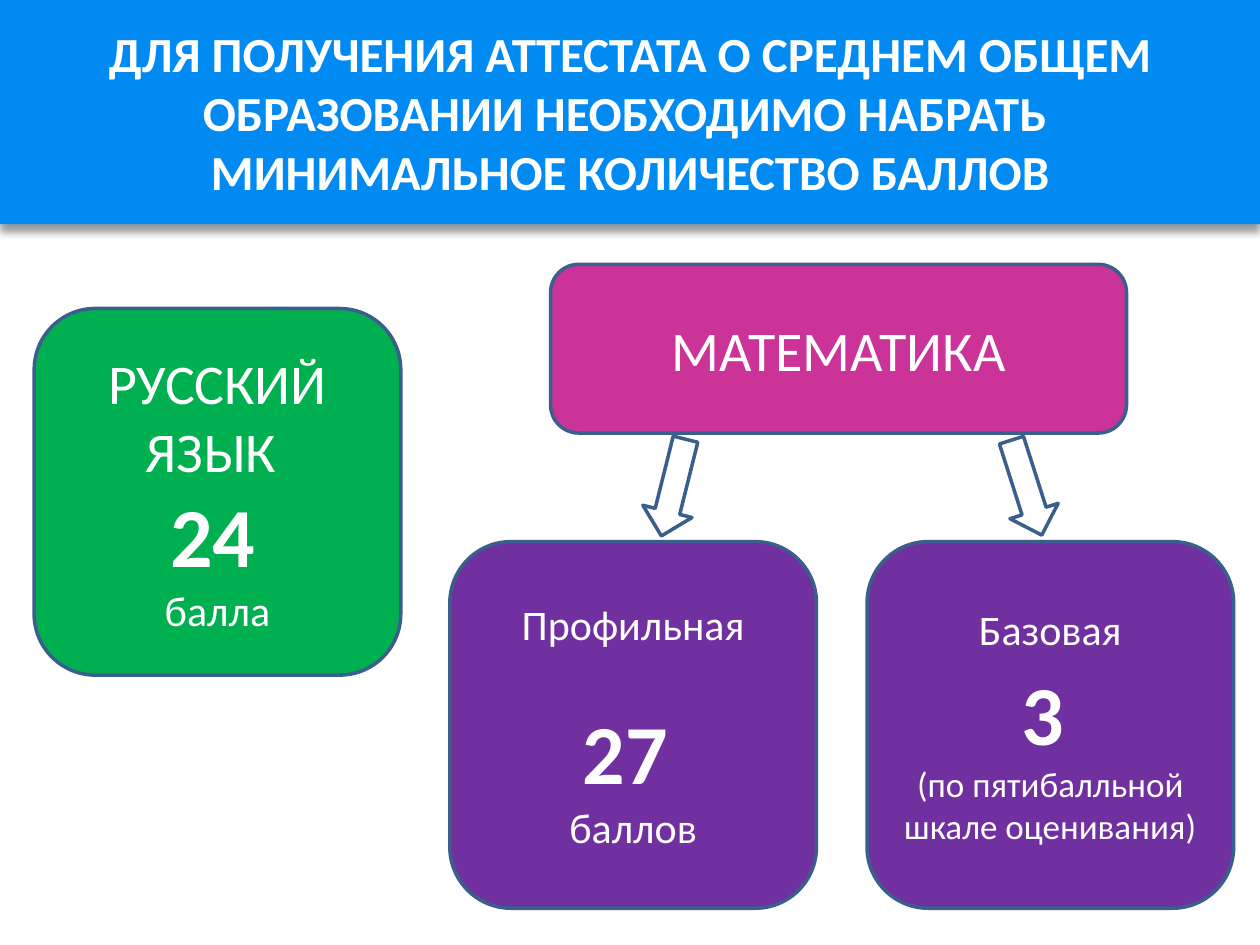
import pptx
import pptx.dml.color
import pptx.enum.shapes
import pptx.enum.text
import pptx.oxml
import pptx.util

Cm = pptx.util.Cm
Pt = pptx.util.Pt
SHAPES = pptx.enum.shapes.MSO_SHAPE

COLORS = {
    "banner": "008AF2",
    "russian": "00B050",
    "level": "7030A0",
    "mathematics": "CC3399",
    "outline": "3A5F8C",
    "white": "FFFFFF",
    "shadow": "000000",
}
FONT = "Calibri"

TITLE = [
    (0, [("ДЛЯ ПОЛУЧЕНИЯ АТТЕСТАТА О СРЕДНЕМ ОБЩЕМ ОБРАЗОВАНИИ НЕОБХОДИМО НАБРАТЬ ", 28, True)]),
    (0, [("МИНИМАЛЬНОЕ КОЛИЧЕСТВО БАЛЛОВ", 28, True)]),
]
RUSSIAN = [
    (0, [("РУССКИЙ ЯЗЫК ", 32, False)]),
    (0, [("24", 48, True), (" ", 24, False)]),
    (0, [("балла", 24, False)]),
]
BASIC = [
    (0, [("Базовая", 24, False)]),
    (4.9, [("3", 48, True), (" ", 40, False)]),
    (0, [("(по пятибалльной шкале оценивания)", 20, False)]),
]
ADVANCED = [
    (0, [("Профильная", 24, False)]),
    (29.3, [("27", 48, True), (" ", 40, False)]),
    (0, [("баллов", 24, False)]),
]
MATHEMATICS = [(0, [("МАТЕМАТИКА", 32, False)])]

SLIDE_WIDTH, SLIDE_HEIGHT = 25.4, 19.05
BANNER_HEIGHT = 4.52
CARD = 7.39
LEVEL_TOP = 10.92
CARDS = [
    ((0.69, 6.22, CARD, CARD), "russian", RUSSIAN),
    ((17.48, LEVEL_TOP, CARD, CARD), "level", BASIC),
    ((9.07, LEVEL_TOP, CARD, CARD), "level", ADVANCED),
    ((11.1, 5.33, 11.61, 3.4), "mathematics", MATHEMATICS),
]
ARROW_TOP, ARROW_LENGTH, ARROW_THICKNESS = 9.32, 2.01, 1.02
ARROWS = [(19.69, 72.3), (12.57, 104)]


def color(name):
    return pptx.dml.color.RGBColor.from_string(COLORS[name])


def paint(shape, name):
    shape.fill.solid()
    shape.fill.fore_color.rgb = color(name)


def write(shape, paragraphs):
    frame = shape.text_frame
    frame.word_wrap = True
    frame.auto_size = pptx.enum.text.MSO_AUTO_SIZE.NONE
    frame.vertical_anchor = pptx.enum.text.MSO_ANCHOR.MIDDLE
    for index, (space_before, runs) in enumerate(paragraphs):
        paragraph = frame.add_paragraph() if index else frame.paragraphs[0]
        paragraph.alignment = pptx.enum.text.PP_ALIGN.CENTER
        paragraph.space_before = Pt(space_before)
        for text, size, bold in runs:
            run = paragraph.add_run()
            run.text = text
            run.font.name = FONT
            run.font.size = Pt(size)
            run.font.bold = bold
            run.font.color.rgb = color("white")


def add_outlined(slide, kind, box, fill):
    shape = slide.shapes.add_shape(kind, *map(Cm, box))
    shape.shadow.inherit = False
    paint(shape, fill)
    shape.line.color.rgb = color("outline")
    shape.line.width = Pt(2)
    return shape


def add_banner(slide):
    title = slide.shapes.title
    title.left, title.top = Cm(0), Cm(0)
    title.width, title.height = Cm(SLIDE_WIDTH), Cm(BANNER_HEIGHT)
    paint(title, "banner")
    write(title, TITLE)
    title._element.spPr.append(pptx.oxml.parse_xml(
        '<a:effectLst xmlns:a="http://schemas.openxmlformats.org/drawingml/2006/main">'
        f'<a:outerShdw blurRad="{Pt(4)}" dist="{Pt(4)}" dir="5400000" rotWithShape="0">'
        f'<a:srgbClr val="{COLORS["shadow"]}"><a:alpha val="40000"/></a:srgbClr>'
        '</a:outerShdw></a:effectLst>'
    ))


def main():
    presentation = pptx.Presentation()
    presentation.slide_width = Cm(SLIDE_WIDTH)
    presentation.slide_height = Cm(SLIDE_HEIGHT)
    slide = presentation.slides.add_slide(presentation.slide_layouts[5])
    add_banner(slide)
    for box, fill, paragraphs in CARDS:
        write(add_outlined(slide, SHAPES.ROUNDED_RECTANGLE, box, fill), paragraphs)
    for left, rotation in ARROWS:
        box = (left, ARROW_TOP, ARROW_LENGTH, ARROW_THICKNESS)
        add_outlined(slide, SHAPES.RIGHT_ARROW, box, "white").rotation = rotation
    presentation.save("out.pptx")


if __name__ == "__main__":
    main()
